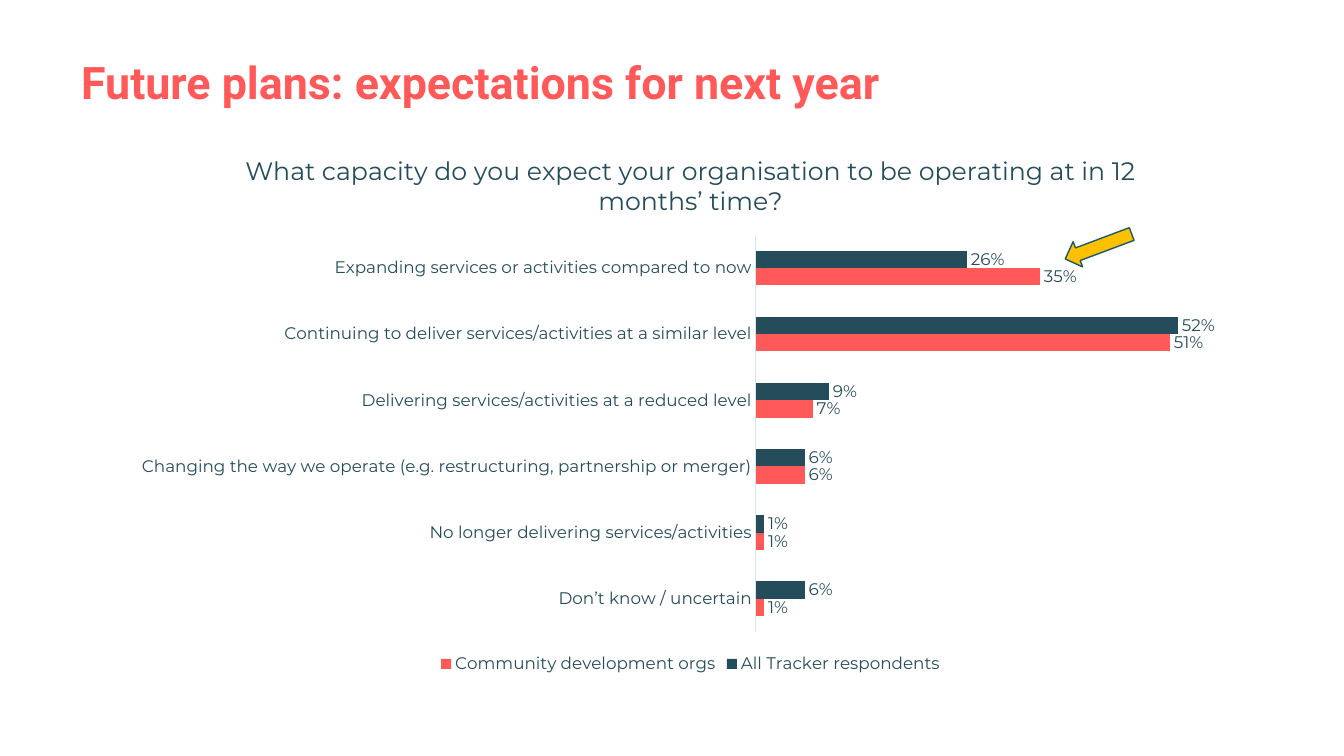
from dataclasses import dataclass

from lxml import etree
from pptx import Presentation
from pptx.chart.data import CategoryChartData
from pptx.dml.color import RGBColor
from pptx.enum.chart import XL_CHART_TYPE, XL_LABEL_POSITION, XL_LEGEND_POSITION, XL_TICK_MARK
from pptx.enum.shapes import MSO_SHAPE
from pptx.enum.text import MSO_ANCHOR, MSO_AUTO_SIZE, PP_ALIGN
from pptx.oxml.ns import qn
from pptx.util import Pt

BAR = XL_CHART_TYPE.BAR_CLUSTERED
OUTSIDE = XL_LABEL_POSITION.OUTSIDE_END
BOTTOM = XL_LEGEND_POSITION.BOTTOM
NO_TICK = XL_TICK_MARK.NONE
RIGHT_ARROW = MSO_SHAPE.RIGHT_ARROW
MIDDLE = MSO_ANCHOR.MIDDLE
NO_FIT = MSO_AUTO_SIZE.NONE
LEFT = PP_ALIGN.LEFT

PAGE_WIDTH, PAGE_HEIGHT = 1344, 756
EMU_PER_PX = 12192000 / PAGE_WIDTH
TITLE_ONLY = 5

QUESTION = "What capacity do you expect your organisation to be operating at in 12 months’ time?"
ANSWERS = [
    ("Expanding services or activities compared to now", 0.26, 0.35),
    ("Continuing to deliver services/activities at a similar level", 0.52, 0.51),
    ("Delivering services/activities at a reduced level", 0.09, 0.07),
    ("Changing the way we operate (e.g. restructuring, partnership or merger)", 0.06, 0.06),
    ("No longer delivering services/activities", 0.01, 0.01),
    ("Don’t know / uncertain", 0.06, 0.01),
]


@dataclass(frozen=True)
class Theme:
    coral: str = "FF5959"
    navy: str = "254C5B"
    pale: str = "D6E8EE"
    amber: str = "FFC000"
    teal: str = "1E5964"
    heading_font: str = "Roboto"
    body_font: str = "Montserrat"
    heading_size: int = 32
    question_size: int = 18
    label_size: int = 12


def px(length):
    return round(length * EMU_PER_PX)


class SlideBuilder:
    def __init__(self, page, theme):
        self.page = page
        self.theme = theme

    def style(self, font, size, color, name, bold=False):
        font.size = Pt(size)
        font.name = name
        font.bold = bold
        font.color.rgb = RGBColor.from_string(color)

    def style_label(self, font):
        self.style(font, self.theme.label_size, self.theme.navy, self.theme.body_font)

    def title(self, text, left, top, width, height):
        box = self.page.shapes.title
        box.left, box.top, box.width, box.height = map(px, (left, top, width, height))
        frame = box.text_frame
        frame.text = text
        frame.word_wrap = True
        frame.auto_size = NO_FIT
        frame.vertical_anchor = MIDDLE
        para = frame.paragraphs[0]
        para.alignment = LEFT
        self.style(para.runs[0].font, self.theme.heading_size, self.theme.coral,
                   self.theme.heading_font, bold=True)

    def bar_chart(self, question, answers, series, left, top, width, height, plot):
        labels, *columns = zip(*answers)
        data = CategoryChartData(number_format="0%")
        data.categories = labels
        for (name, _), values in zip(series, columns):
            data.add_series(name, values)
        frame = self.page.shapes.add_chart(BAR, *map(px, (left, top, width, height)), data)
        chart = frame.chart
        self.style_label(chart.font)
        heading = chart.chart_title.text_frame
        heading.text = question
        self.style(heading.paragraphs[0].runs[0].font, self.theme.question_size,
                   self.theme.navy, self.theme.body_font)
        chart.has_legend = True
        chart.legend.position = BOTTOM
        chart.legend.include_in_layout = False
        self.style_label(chart.legend.font)

        categories = chart.category_axis
        categories.reverse_order = True
        categories.major_tick_mark = NO_TICK
        categories.minor_tick_mark = NO_TICK
        categories.format.line.color.rgb = RGBColor.from_string(self.theme.pale)
        categories.format.line.width = Pt(0.75)
        self.style_label(categories.tick_labels.font)
        values = chart.value_axis
        values.minimum_scale, values.maximum_scale = 0, 0.6
        values.has_major_gridlines = False
        values.visible = False

        bars = chart.plots[0]
        bars.gap_width = 182
        bars.overlap = 0
        bars.vary_by_categories = False
        for item, (_, color) in zip(bars.series, series):
            item.format.fill.solid()
            item.format.fill.fore_color.rgb = RGBColor.from_string(color)
            marks = item.data_labels
            marks.show_value = True
            marks.number_format = "0%"
            marks.number_format_is_linked = False
            marks.position = OUTSIDE
            self.style_label(marks.font)
        self.place_plot(chart, plot, (left, top, width, height))

    def place_plot(self, chart, plot, outer):
        area = chart.element.find(".//" + qn("c:plotArea"))
        for old in area.findall(qn("c:layout")):
            area.remove(old)
        layout = etree.Element(qn("c:layout"))
        manual = etree.SubElement(layout, qn("c:manualLayout"))
        left, top, width, height = outer
        fractions = ((plot[0] - left) / width, (plot[1] - top) / height,
                     plot[2] / width, plot[3] / height)
        settings = [("layoutTarget", "inner"), ("xMode", "edge"), ("yMode", "edge")]
        settings += [(key, f"{part:.4f}") for key, part in zip("xywh", fractions)]
        for key, value in settings:
            etree.SubElement(manual, qn("c:" + key)).set("val", value)
        area.insert(0, layout)

    def arrow(self, left, top, width, height, rotation):
        shape = self.page.shapes.add_shape(RIGHT_ARROW, *map(px, (left, top, width, height)))
        shape.rotation = rotation
        shape.shadow.inherit = False
        shape.fill.solid()
        shape.fill.fore_color.rgb = RGBColor.from_string(self.theme.amber)
        shape.line.color.rgb = RGBColor.from_string(self.theme.teal)
        shape.line.width = Pt(1)


def main():
    deck = Presentation()
    deck.slide_width, deck.slide_height = px(PAGE_WIDTH), px(PAGE_HEIGHT)
    theme = Theme()
    page = deck.slides.add_slide(deck.slide_layouts[TITLE_ONLY])
    builder = SlideBuilder(page, theme)
    builder.title("Future plans: expectations for next year", 71, 49, 1204, 66)
    series = [("All Tracker respondents", theme.navy),
              ("Community development orgs", theme.coral)]
    builder.bar_chart(QUESTION, ANSWERS, series, 119, 132, 1143, 546,
                      plot=(756, 235, 487, 397))
    builder.arrow(1063, 233, 71, 27, 159.4)
    deck.save("out.pptx")


if __name__ == "__main__":
    main()
